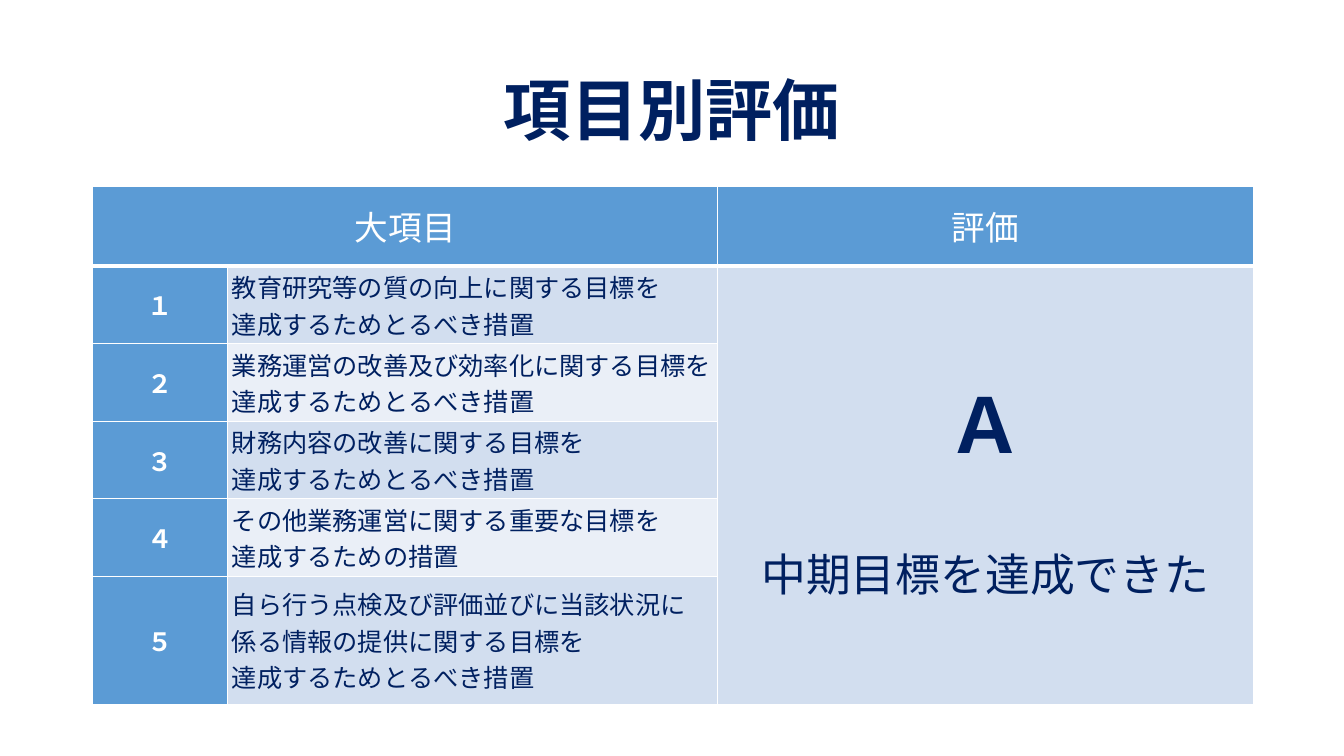
from lxml import etree
from pptx import Presentation, util as u
from pptx.dml.color import RGBColor
from pptx.enum import lang, text
from pptx.oxml import ns

NAVY = RGBColor(0x00, 0x20, 0x60)
WHITE = RGBColor(0xFF, 0xFF, 0xFF)
BLUE = RGBColor(0x5B, 0x9B, 0xD5)
BAND_DARK = RGBColor(0xD2, 0xDE, 0xEF)
BAND_LIGHT = RGBColor(0xEA, 0xEF, 0xF7)

FONT = "Calibri"
PAGE_WIDTH, PAGE_HEIGHT = 13.33, 7.5
MARGIN = 0.92
COLUMN_WIDTHS = [1.34, 4.86, 5.31]
ROW_HEIGHTS = [0.79] + [0.77] * 4 + [1.27]
THIN, THICK = 1, 3

GOALS = [
    ("１", ["教育研究等の質の向上に関する目標を", "達成するためとるべき措置"]),
    ("２", ["業務運営の改善及び効率化に関する目標を", "達成するためとるべき措置"]),
    ("３", ["財務内容の改善に関する目標を", "達成するためとるべき措置"]),
    ("４", ["その他業務運営に関する重要な目標を", "達成するための措置"]),
    ("５", ["自ら行う点検及び評価並びに当該状況に", "係る情報の提供に関する目標を",
           "達成するためとるべき措置"]),
]


def write(frame, line, size, color=NAVY, bold=False, centred=True, before=0, spacing=1.0):
    """Add one paragraph, using the frame's first one while it is empty."""
    para = frame.paragraphs[0]
    if para.runs:
        para = frame.add_paragraph()
    para.alignment = text.PP_ALIGN.CENTER if centred else text.PP_ALIGN.LEFT
    para.space_before = u.Pt(before)
    para.line_spacing = spacing
    span = para.add_run()
    span.text = line
    span.font.name = FONT
    span.font.size = u.Pt(size)
    span.font.bold = bold
    span.font.color.rgb = color
    span.font.language_id = lang.MSO_LANGUAGE_ID.JAPANESE


def add_title(page, left, top, width, height):
    box = page.shapes.add_textbox(*map(u.Inches, (left, top, width, height)))
    frame = box.text_frame
    frame.word_wrap = True
    frame.vertical_anchor = text.MSO_ANCHOR.MIDDLE
    write(frame, "項目別評価", size=48, bold=True, spacing=0.9)


def set_borders(cell, top, bottom):
    properties = cell._tc.get_or_add_tcPr()
    widths = {"a:lnL": THIN, "a:lnR": THIN, "a:lnT": top, "a:lnB": bottom}
    for place, (tag, width) in enumerate(widths.items()):
        line = etree.Element(ns.qn(tag), w=str(u.Pt(width)))
        fill = etree.SubElement(line, ns.qn("a:solidFill"))
        etree.SubElement(fill, ns.qn("a:srgbClr"), val=str(WHITE))
        properties.insert(place, line)


def format_cell(cell, row, column):
    cell.margin_left = cell.margin_right = u.Inches(0.04)
    cell.margin_top = cell.margin_bottom = 0
    cell.vertical_anchor = text.MSO_ANCHOR.MIDDLE
    cell.fill.solid()
    if row == 0 or column == 0:
        color = BLUE
    elif column == 1 and row % 2 == 0:
        color = BAND_LIGHT
    else:
        color = BAND_DARK
    cell.fill.fore_color.rgb = color
    set_borders(cell, top=THICK if row == 1 else THIN, bottom=THICK if row == 0 else THIN)


def add_ratings(page, left, top, width, height):
    frame = page.shapes.add_table(len(ROW_HEIGHTS), len(COLUMN_WIDTHS),
                                  *map(u.Inches, (left, top, width, height)))
    table = frame.table
    for column, share in zip(table.columns, COLUMN_WIDTHS):
        column.width = u.Inches(width * share / sum(COLUMN_WIDTHS))
    for row, share in zip(table.rows, ROW_HEIGHTS):
        row.height = u.Inches(height * share / sum(ROW_HEIGHTS))
    for row in range(len(ROW_HEIGHTS)):
        for column in range(len(COLUMN_WIDTHS)):
            format_cell(table.cell(row, column), row, column)

    table.cell(0, 0).merge(table.cell(0, 1))
    table.cell(1, 2).merge(table.cell(len(GOALS), 2))
    for column, heading in ((0, "大項目"), (2, "評価")):
        write(table.cell(0, column).text_frame, heading, size=24, color=WHITE)
    for row, (number, lines) in enumerate(GOALS, start=1):
        write(table.cell(row, 0).text_frame, number, size=18, color=WHITE, bold=True)
        for line in lines:
            write(table.cell(row, 1).text_frame, line, size=18, centred=False)
    verdict = table.cell(1, 2).text_frame
    write(verdict, "Ａ", size=54, bold=True)
    write(verdict, "中期目標を達成できた", size=32, before=46)


def main():
    deck = Presentation()
    deck.slide_width, deck.slide_height = u.Inches(PAGE_WIDTH), u.Inches(PAGE_HEIGHT)
    page = deck.slides.add_slide(deck.slide_layouts[6])
    width = PAGE_WIDTH - 2 * MARGIN
    add_title(page, MARGIN, 0.4, width, 1.45)
    add_ratings(page, MARGIN, 1.85, sum(COLUMN_WIDTHS), sum(ROW_HEIGHTS))
    deck.save("out.pptx")


if __name__ == "__main__":
    main()
